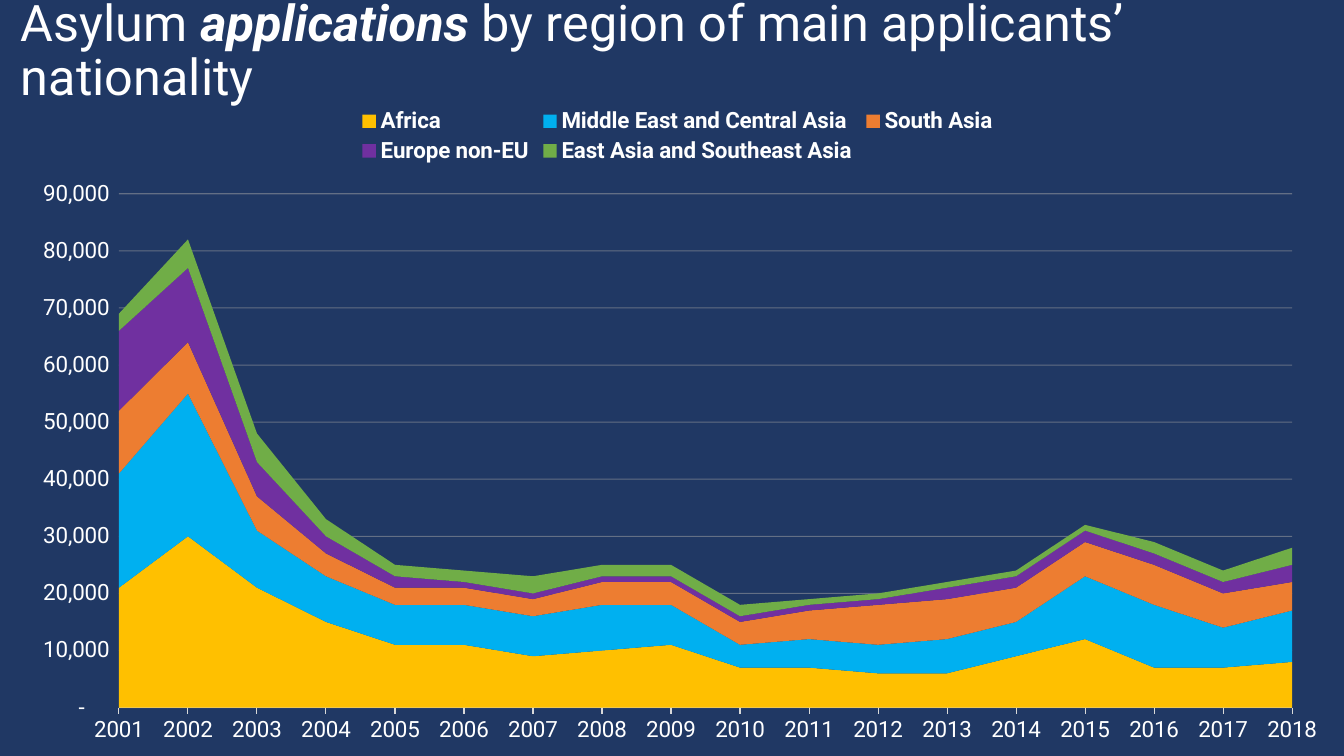
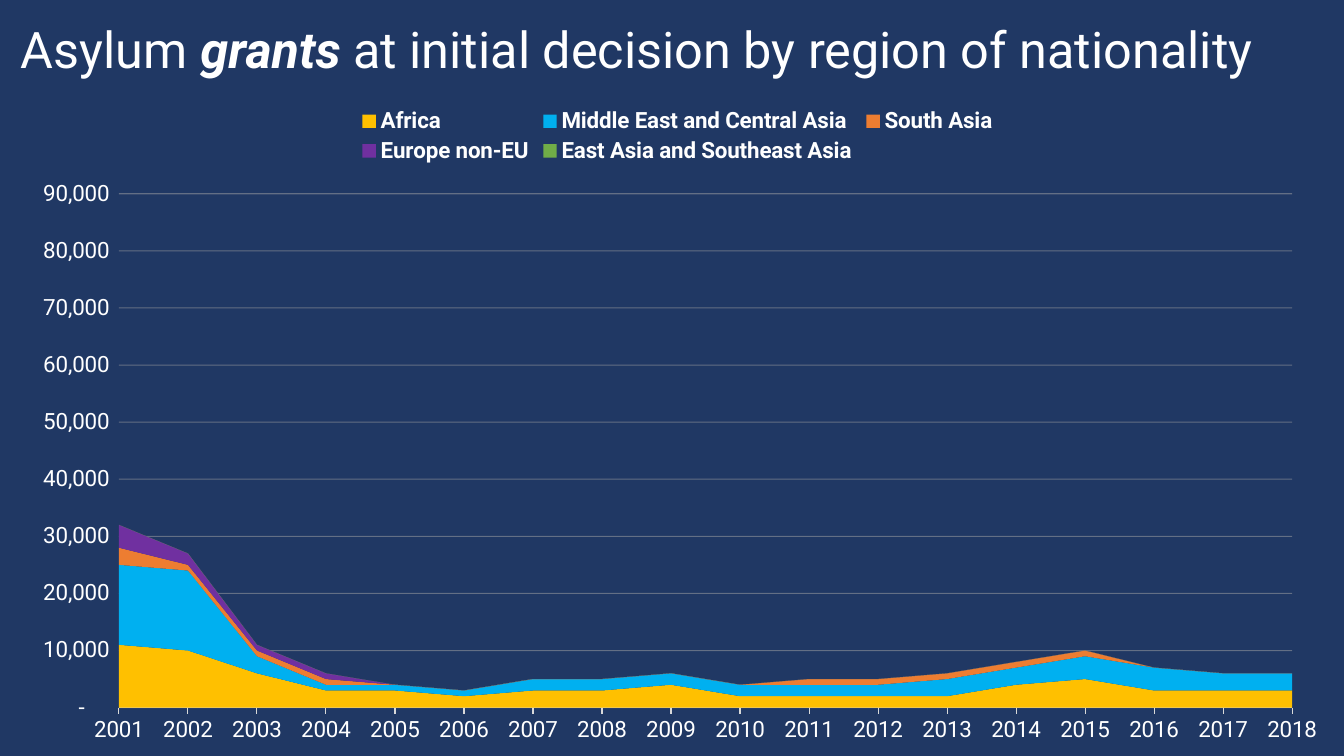
from lxml import etree
from pptx import Presentation
from pptx import util as u
from pptx.chart.data import CategoryChartData
from pptx.dml.color import RGBColor
from pptx.enum import chart as ch, text
from pptx.oxml import ns

COLORS = {
    "background": "203864",
    "text": "FFFFFF",
    "axis": "D9D9D9",
    "grid": "A6A6A6",
}
REGIONS = {
    "Africa": "FFC000",
    "Middle East and Central Asia": "00B0F0",
    "South Asia": "ED7D31",
    "Europe non-EU": "7030A0",
    "East Asia and Southeast Asia": "70AD47",
}
YEARS = [str(year) for year in range(2001, 2019)]
NUMBER_FORMAT = '_-* #,##0_-;\\-* #,##0_-;_-* "-"??_-;_-@_'

# Thousands of people per year, one row per region
APPLICATIONS = [
    [21, 30, 21, 15, 11, 11, 9, 10, 11, 7, 7, 6, 6, 9, 12, 7, 7, 8],
    [20, 25, 10, 8, 7, 7, 7, 8, 7, 4, 5, 5, 6, 6, 11, 11, 7, 9],
    [11, 9, 6, 4, 3, 3, 3, 4, 4, 4, 5, 7, 7, 6, 6, 7, 6, 5],
    [14, 13, 6, 3, 2, 1, 1, 1, 1, 1, 1, 1, 2, 2, 2, 2, 2, 3],
    [3, 5, 5, 3, 2, 2, 3, 2, 2, 2, 1, 1, 1, 1, 1, 2, 2, 3],
]
GRANTS = [
    [11, 10, 6, 3, 3, 2, 3, 3, 4, 2, 2, 2, 2, 4, 5, 3, 3, 3],
    [14, 14, 3, 1, 1, 1, 2, 2, 2, 2, 2, 2, 3, 3, 4, 4, 3, 3],
    [3, 1, 1, 1, 0, 0, 0, 0, 0, 0, 1, 1, 1, 1, 1, 0, 0, 0],
    [4, 2, 1, 1] + [0] * 14,
    [0] * 18,
]


def rgb(name):
    return RGBColor.from_string(COLORS[name])


def style_font(font, size=16, bold=False, italic=False, color="text"):
    font.name = "Roboto"
    font.size = u.Pt(size)
    font.bold = bold
    font.italic = italic
    font.color.rgb = rgb(color)


def add_run(p, content, **style):
    r = p.add_run()
    r.text = content
    style_font(r.font, **style)


def style_line(line, color, opacity=100):
    line.width = u.Pt(0.75)
    line.color.rgb = rgb(color)
    if opacity < 100:
        clr = line.fill._xPr.find(".//" + ns.qn("a:srgbClr"))
        etree.SubElement(clr, ns.qn("a:alpha"), val=str(opacity * 1000))


class Deck:
    def __init__(self):
        self.prs = Presentation()
        self.prs.slide_width, self.prs.slide_height = u.Cm(33.87), u.Cm(19.05)
        self.s = None

    def slide(self):
        self.s = self.prs.slides.add_slide(self.prs.slide_layouts[6])
        fill = self.s.background.fill
        fill.solid()
        fill.fore_color.rgb = rgb("background")

    def title(self, before, emphasis, after):
        sp = self.s.shapes.add_textbox(u.Cm(0.28), u.Cm(0.2), u.Cm(32.92), u.Cm(2.24))
        tf = sp.text_frame
        tf.word_wrap = True
        tf.vertical_anchor = text.MSO_ANCHOR.MIDDLE
        p = tf.paragraphs[0]
        p.line_spacing = 0.9
        add_run(p, before, size=36)
        add_run(p, emphasis, size=36, bold=True, italic=True)
        add_run(p, after, size=36)

    def area_chart(self, rows):
        data = CategoryChartData(number_format=NUMBER_FORMAT)
        data.categories = YEARS
        for region, row in zip(REGIONS, rows):
            data.add_series(region, [n * 1000 for n in row])
        chart = self.s.shapes.add_chart(
            ch.XL_CHART_TYPE.AREA_STACKED,
            u.Cm(0.28), u.Cm(2.44), u.Cm(33.58), u.Cm(16.61), data).chart
        style_font(chart.font)
        chart.has_title = False
        plot = chart.plots[0]
        plot.vary_by_categories = False
        for series, color in zip(plot.series, REGIONS.values()):
            series.format.fill.solid()
            series.format.fill.fore_color.rgb = RGBColor.from_string(color)
        self.legend(chart)
        self.axes(chart)

    def legend(self, chart):
        chart.has_legend = True
        chart.legend.position = ch.XL_LEGEND_POSITION.TOP
        chart.legend.include_in_layout = False
        style_font(chart.legend.font, bold=True)

    def axes(self, chart):
        years, people = chart.category_axis, chart.value_axis
        for axis in (years, people):
            style_font(axis.tick_labels.font)
            axis.minor_tick_mark = ch.XL_TICK_MARK.NONE
        years.has_major_gridlines = False
        years.major_tick_mark = ch.XL_TICK_MARK.OUTSIDE
        style_line(years.format.line, "axis")
        people.minimum_scale, people.maximum_scale = 0, 90000
        people.major_unit = 10000
        people.major_tick_mark = ch.XL_TICK_MARK.NONE
        people.format.line.fill.background()
        people.has_major_gridlines = True
        style_line(people.major_gridlines.format.line, "grid", opacity=50)
        people.tick_labels.number_format = NUMBER_FORMAT
        people.tick_labels.number_format_is_linked = False
        # Areas start on the value axis rather than half a category away
        people._element.find(ns.qn("c:crossBetween")).set("val", "midCat")


def main():
    deck = Deck()
    for title, rows in (
        (("Asylum ", "applications", " by region of main applicants’ nationality"),
         APPLICATIONS),
        (("Asylum ", "grants", " at initial decision by region of nationality"),
         GRANTS),
    ):
        deck.slide()
        deck.title(*title)
        deck.area_chart(rows)
    deck.prs.save("out.pptx")


if __name__ == "__main__":
    main()
